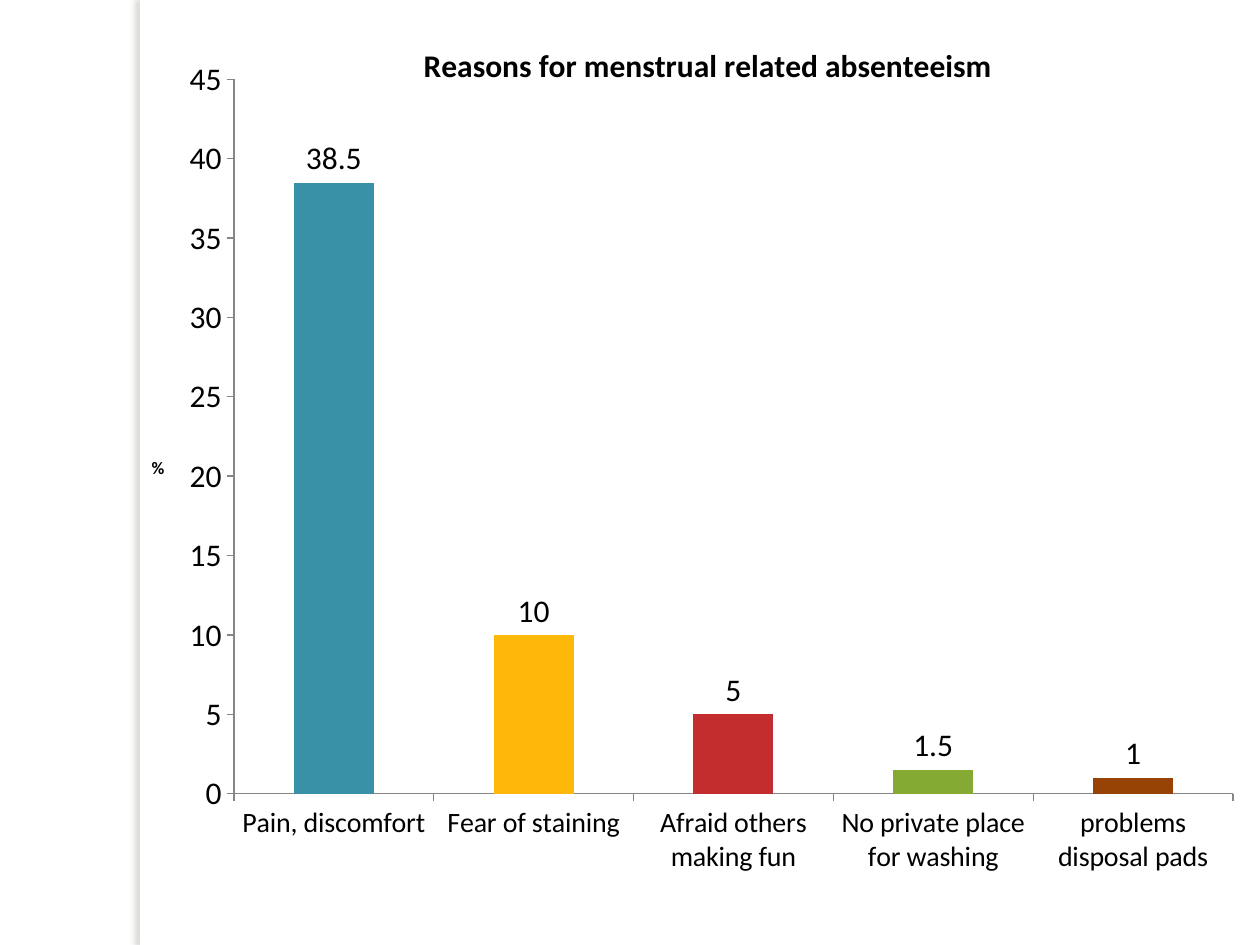
"""Slide with a column chart of the reasons for menstrual related absenteeism."""
from lxml import etree
from pptx import Presentation
from pptx import util as u
from pptx.chart.data import CategoryChartData
from pptx.dml.color import RGBColor
from pptx.enum import chart as ch, shapes
from pptx.oxml import parse_xml
from pptx.oxml.ns import nsdecls, qn

HEADING = "Reasons for menstrual related absenteeism"
UNIT = "%"
REASONS = [
    ("Pain, discomfort", 38.5, "3891A7"),
    ("Fear of staining", 10, "FEB80A"),
    ("Afraid others making fun", 5, "C32D2E"),
    ("No private place for washing", 1.5, "84AA33"),
    ("problems disposal pads", 1, "964305"),
]
THEME = {
    "font": "Calibri", "text": "000000", "axis": "868686",
    "panel": "FFFFFF", "shadow": "736F63",
    "heading": 18, "values": 18, "categories": 16, "unit": 10,
}
SLIDE_W, SLIDE_H = 25.4, 19.05
CHART_LEFT = 2.77


def style_font(font, size, bold=False):
    font.name, font.size, font.bold = THEME["font"], u.Pt(size), bold
    font.color.rgb = RGBColor.from_string(THEME["text"])


def place(element, x, y, size=None):
    for old in element.findall(qn("c:layout")):
        element.remove(old)
    layout = parse_xml(f"<c:layout {nsdecls('c')}><c:manualLayout/></c:layout>")
    settings = [("xMode", "edge"), ("yMode", "edge"), ("x", x), ("y", y)]
    if size:
        settings.insert(0, ("layoutTarget", "inner"))
        settings += [("w", size[0]), ("h", size[1])]
    for tag, value in settings:
        etree.SubElement(layout[0], qn(f"c:{tag}")).set("val", str(value))
    wording = element.find(qn("c:tx"))
    if wording is None:
        element.insert(0, layout)
    else:
        wording.addnext(layout)


def write_title(title, wording, size, x, y):
    run = title.text_frame.paragraphs[0].add_run()
    run.text = wording
    style_font(run.font, size, bold=True)
    element = title._element
    place(element, x, y)
    element.find(qn("c:overlay")).set("val", "1")
    next(element.iter(qn("a:bodyPr"))).set("rot", "0")


def style_axis(axis, size):
    axis.has_major_gridlines = False
    axis.major_tick_mark = ch.XL_TICK_MARK.OUTSIDE
    axis.format.line.color.rgb = RGBColor.from_string(THEME["axis"])
    axis.format.line.width = u.Pt(0.75)
    style_font(axis.tick_labels.font, size)


def add_panel_edge(slide):
    edge = slide.shapes.add_shape(
        shapes.MSO_SHAPE.RECTANGLE, u.Cm(2.82), 0, u.Cm(0.2), u.Cm(SLIDE_H))
    edge.fill.solid()
    edge.fill.fore_color.rgb = RGBColor.from_string(THEME["panel"])
    edge.line.fill.background()
    edge.shadow.inherit = False
    effects = edge._element.spPr.find(qn("a:effectLst"))
    effects.append(parse_xml(
        f'<a:outerShdw {nsdecls("a")} blurRad="{u.Pt(3)}" dist="{u.Pt(3)}" dir="10800000" '
        f'algn="tl" rotWithShape="0"><a:srgbClr val="{THEME["shadow"]}">'
        '<a:alpha val="25000"/></a:srgbClr></a:outerShdw>'))


def add_reasons_chart(slide):
    data = CategoryChartData()
    data.categories = [reason for reason, _, _ in REASONS]
    data.add_series("Series 1", [share for _, share, _ in REASONS])
    chart = slide.shapes.add_chart(
        ch.XL_CHART_TYPE.COLUMN_CLUSTERED, u.Cm(CHART_LEFT), 0,
        u.Cm(SLIDE_W - CHART_LEFT), u.Cm(SLIDE_H), data).chart
    chart.has_legend = False
    style_font(chart.font, THEME["unit"])
    chart._chartSpace.chart.addnext(parse_xml(
        f"<c:spPr {nsdecls('c', 'a')}><a:noFill/><a:ln><a:noFill/></a:ln></c:spPr>"))
    place(chart._chartSpace.chart.plotArea, 0.086, 0.084, (0.89, 0.756))

    chart.has_title = True
    write_title(chart.chart_title, HEADING, THEME["heading"], 0.25, 0.04)
    style_axis(chart.category_axis, THEME["categories"])
    shares = chart.value_axis
    style_axis(shares, THEME["values"])
    shares.minimum_scale, shares.maximum_scale, shares.major_unit = 0, 45, 5
    shares.has_title = True
    write_title(shares.axis_title, UNIT, THEME["unit"], 0.01, 0.48)

    columns = chart.plots[0]
    columns.gap_width = 150
    columns.vary_by_categories = False
    columns.has_data_labels = True
    labels = columns.data_labels
    labels.show_value = True
    labels.position = ch.XL_LABEL_POSITION.OUTSIDE_END
    style_font(labels.font, THEME["values"])
    for index, (_, _, color) in enumerate(REASONS):
        fill = columns.series[0].points[index].format.fill
        fill.solid()
        fill.fore_color.rgb = RGBColor.from_string(color)


def main():
    deck = Presentation()
    deck.slide_width, deck.slide_height = u.Cm(SLIDE_W), u.Cm(SLIDE_H)
    slide = deck.slides.add_slide(deck.slide_layouts[6])
    add_panel_edge(slide)
    add_reasons_chart(slide)
    deck.save("out.pptx")


if __name__ == "__main__":
    main()
